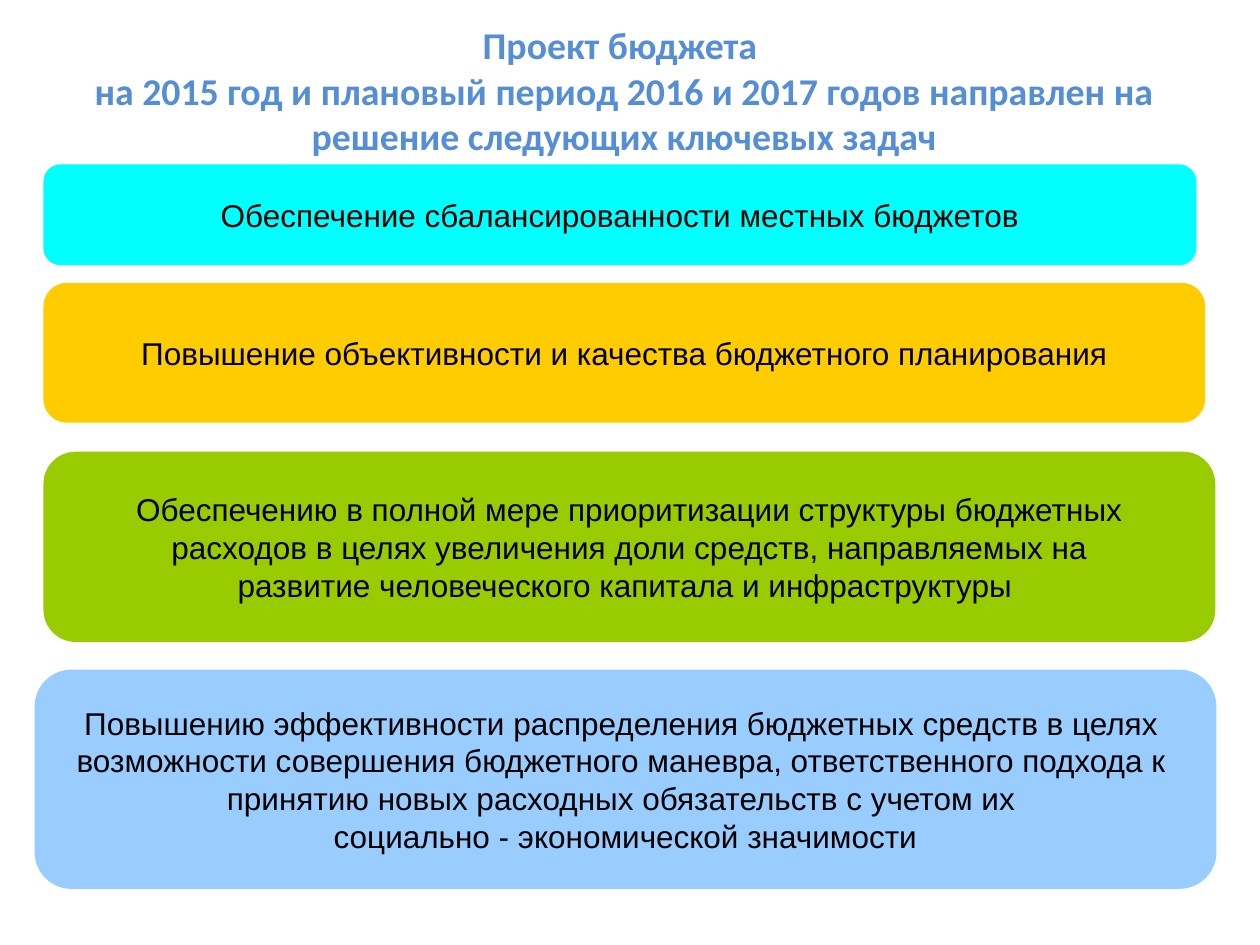
from dataclasses import dataclass

from pptx import Presentation
from pptx import util as u
from pptx.dml.color import RGBColor
from pptx.enum import shapes, text


@dataclass(frozen=True)
class Theme:
    heading: str = "558ED5"
    body: str = "000000"
    heading_font: str = "Calibri"
    body_font: str = "Arial"
    heading_size: float = 21.6
    body_size: float = 18
    outline: float = 0.75


THEME = Theme()

HEADING = ("Проект бюджета \vна 2015 год и плановый период 2016 и 2017 годов "
           "направлен на решение следующих ключевых задач")

# Box (left, top, width, height), colour and lines of each budget task
TASKS = [
    ((0.35, 1.31, 9.14, 0.79), "00FFFF",
     ["Обеспечение сбалансированности местных бюджетов"]),
    ((0.35, 2.25, 9.21, 1.1), "FFCC00",
     ["Повышение объективности и качества бюджетного планирования"]),
    ((0.35, 3.59, 9.29, 1.5), "99CC00",
     ["Обеспечению в полной мере приоритизации структуры бюджетных",
      " расходов в целях увеличения доли средств, направляемых на ",
      "развитие человеческого капитала и инфраструктуры "]),
    ((0.28, 5.32, 9.37, 1.73), "99CCFF",
     ["Повышению эффективности распределения бюджетных средств в целях ",
      "возможности совершения бюджетного маневра, ответственного подхода к ",
      "принятию новых расходных обязательств с учетом их ",
      "социально - экономической значимости"]),
]


def inches(box):
    return [u.Inches(length) for length in box]


def write_centred(frame, lines, color, wrap, **font_format):
    frame.word_wrap = wrap
    frame.vertical_anchor = text.MSO_ANCHOR.MIDDLE
    for index, line in enumerate(lines):
        paragraph = frame.add_paragraph() if index else frame.paragraphs[0]
        paragraph.text = line
        paragraph.alignment = text.PP_ALIGN.CENTER
        for run in paragraph.runs:
            for attribute, value in font_format.items():
                setattr(run.font, attribute, value)
            run.font.color.rgb = RGBColor.from_string(color)


def add_heading(slide, box):
    heading = slide.shapes.add_textbox(*inches(box))
    write_centred(heading.text_frame, [HEADING], THEME.heading, True,
                  name=THEME.heading_font, size=u.Pt(THEME.heading_size), bold=True)


def add_task(slide, box, color, lines):
    task = slide.shapes.add_shape(shapes.MSO_SHAPE.ROUNDED_RECTANGLE, *inches(box))
    task.shadow.inherit = False
    task.fill.solid()
    task.line.width = u.Pt(THEME.outline)
    for part in (task.fill.fore_color, task.line.color):
        part.rgb = RGBColor.from_string(color)
    write_centred(task.text_frame, lines, THEME.body, False,
                  name=THEME.body_font, size=u.Pt(THEME.body_size))


def main():
    deck = Presentation()
    deck.slide_width, deck.slide_height = u.Inches(10), u.Inches(7.5)
    slide = deck.slides.add_slide(deck.slide_layouts[6])

    # Heading above the stack of tasks
    add_heading(slide, (0.27, 0.28, 9.37, 0.87))

    # Key tasks of the budget
    for box, color, lines in TASKS:
        add_task(slide, box, color, lines)

    deck.save("out.pptx")


if __name__ == "__main__":
    main()
